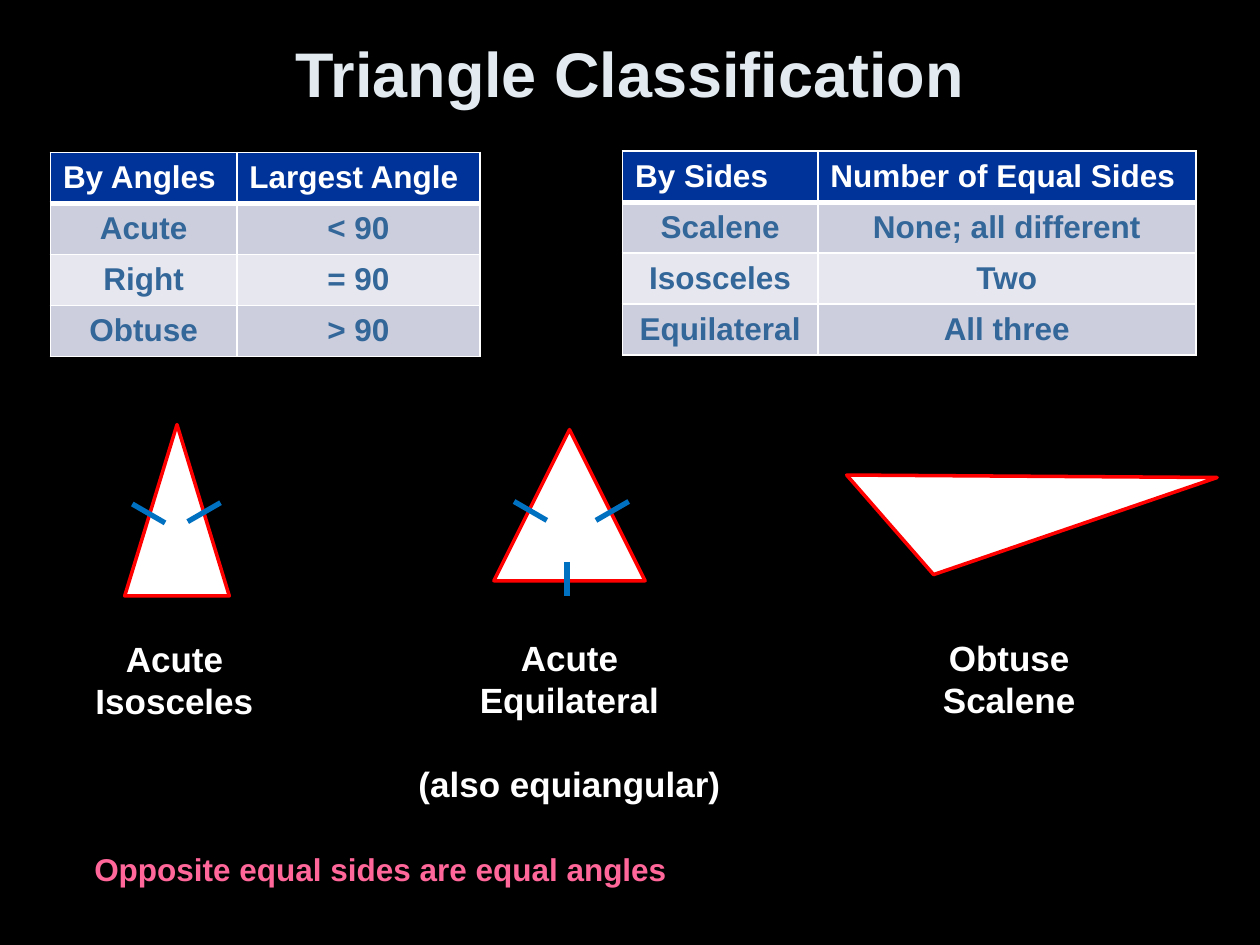
from lxml.etree import SubElement as Sub
from pptx import Presentation
from pptx.dml.color import RGBColor
from pptx.enum.shapes import MSO_CONNECTOR as Conn, MSO_SHAPE as Shape
from pptx.enum.text import MSO_ANCHOR as Anchor, MSO_AUTO_SIZE as Auto, PP_ALIGN as Align
from pptx.oxml.ns import qn
from pptx.util import Pt

PX = 9144  # 100 px to the inch
WHITE, RED, BLUE = "FFFFFF", "FF0000", "0070C0"
NAVY, STEEL, PINK, PALE = "003399", "336699", "FF6699", "E3EBF1"
BANDS = "CCCEDE", "E7E8EF"


def emu(*nums):
    return [round(n * PX) for n in nums]


def rgb(code):
    return RGBColor.from_string(code)


def style(para, size, color, align=Align.CENTER):
    para.alignment = align
    font = para.font
    font.name, font.size, font.bold = "Arial", Pt(size), True
    font.color.rgb = rgb(color)


def add_title(slide, box, text):
    title = slide.shapes.title
    title.left, title.top, title.width, title.height = emu(*box)
    frame = title.text_frame
    frame.text = text
    frame.vertical_anchor = Anchor.MIDDLE
    style(frame.paragraphs[0], 36, PALE)


def edge(cell, base):
    """White borders, with a base line of the given width in points."""
    props = cell._tc.get_or_add_tcPr()
    for i, side in enumerate(("lnL", "lnR", "lnT", "lnB")):
        width = base if side == "lnB" else 1
        line = Sub(props, qn("a:" + side), w=str(Pt(width)))
        Sub(Sub(line, qn("a:solidFill")), qn("a:srgbClr"), val=WHITE)
        props.insert(i, line)


def add_grid(slide, box, widths, rows):
    table = slide.shapes.add_table(len(rows), len(widths), *emu(*box)).table
    for col, width in zip(table.columns, widths):
        col.width = width * PX
    for r, row in enumerate(rows):
        head = r == 0
        for c, text in enumerate(row):
            cell = table.cell(r, c)
            cell.text = text
            cell.vertical_anchor = Anchor.MIDDLE
            cell.fill.solid()
            cell.fill.fore_color.rgb = rgb(NAVY if head else BANDS[(r - 1) % 2])
            style(cell.text_frame.paragraphs[0], 18, WHITE if head else STEEL,
                  Align.LEFT if head else Align.CENTER)
            edge(cell, 3 if head else 1)


def add_text(slide, box, lines, size=20, color=WHITE, align=Align.CENTER):
    frame = slide.shapes.add_textbox(*emu(*box)).text_frame
    frame.word_wrap = False
    frame.auto_size = Auto.SHAPE_TO_FIT_TEXT
    frame.text = "\n".join(lines)
    for para in frame.paragraphs:
        style(para, size, color, align)
    return frame


def paint(shape):
    shape.shadow.inherit = False
    shape.fill.solid()
    shape.fill.fore_color.rgb = rgb(WHITE)
    shape.line.color.rgb = rgb(RED)
    shape.line.width = Pt(2)


def add_peak(slide, box, ticks):
    """Upright triangle; ticks are lines measured from the box corner."""
    x, y, _, _ = box
    paint(slide.shapes.add_shape(Shape.ISOSCELES_TRIANGLE, *emu(*box)))
    for x1, y1, x2, y2 in ticks:
        tick = slide.shapes.add_connector(
            Conn.STRAIGHT, *emu(x + x1, y + y1, x + x2, y + y2))
        tick.line.color.rgb = rgb(BLUE)
        tick.line.width = Pt(3)
        Sub(tick._element.spPr, qn("a:effectLst"))


def add_wedge(slide, box):
    x, y, w, h = box
    build = slide.shapes.build_freeform(x, y, scale=PX)
    build.add_line_segments([(x + w, y + 2), (x + 69, y + h)], close=True)
    paint(build.convert_to_shape())


def main():
    deck = Presentation()
    deck.slide_width, deck.slide_height = emu(1000, 750)
    slide = deck.slides.add_slide(deck.slide_layouts[5])
    back = slide.background.fill
    back.solid()
    back.fore_color.rgb = rgb("000000")
    add_title(slide, (50, 10, 900, 94), "Triangle Classification")

    # Tables
    add_grid(slide, (40, 121, 341, 162), (148, 193), [
        ("By Angles", "Largest Angle"), ("Acute", "< 90"),
        ("Right", "= 90"), ("Obtuse", "> 90")])
    add_grid(slide, (494, 120, 455, 162), (155, 300), [
        ("By Sides", "Number of Equal Sides"), ("Scalene", "None; all different"),
        ("Isosceles", "Two"), ("Equilateral", "All three")])

    # Triangles with tick marks on equal sides
    add_peak(slide, (99, 337, 83, 136), [(6, 63, 32, 78), (76, 62, 50, 77)])
    add_peak(slide, (392, 341, 120, 120),
             [(16, 57, 42, 72), (107, 57, 81, 72), (58, 105, 58, 132)])
    add_wedge(slide, (672, 377, 294, 79))

    # Labels
    add_text(slide, (65, 501, 147, 77), ["Acute", "Isosceles"])
    label = add_text(slide, (321, 500, 262, 145),
                     ["Acute", "Equilateral", "(also equiangular)"])
    label.paragraphs[-1].space_before = Pt(24)
    add_text(slide, (738, 500, 126, 77), ["Obtuse", "Scalene"])
    add_text(slide, (65, 670, 479, 40), ["Opposite equal sides are equal angles"],
             18, PINK, Align.LEFT)

    deck.save("out.pptx")


if __name__ == "__main__":
    main()
